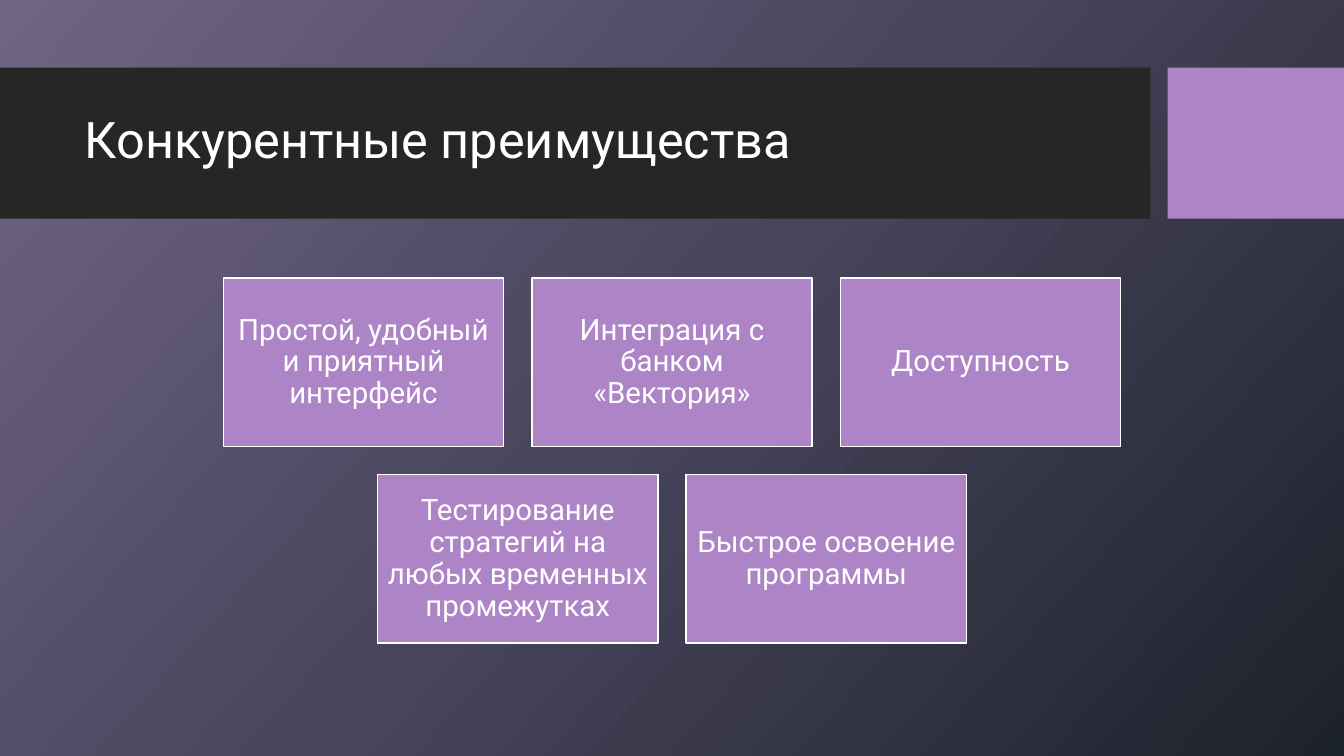
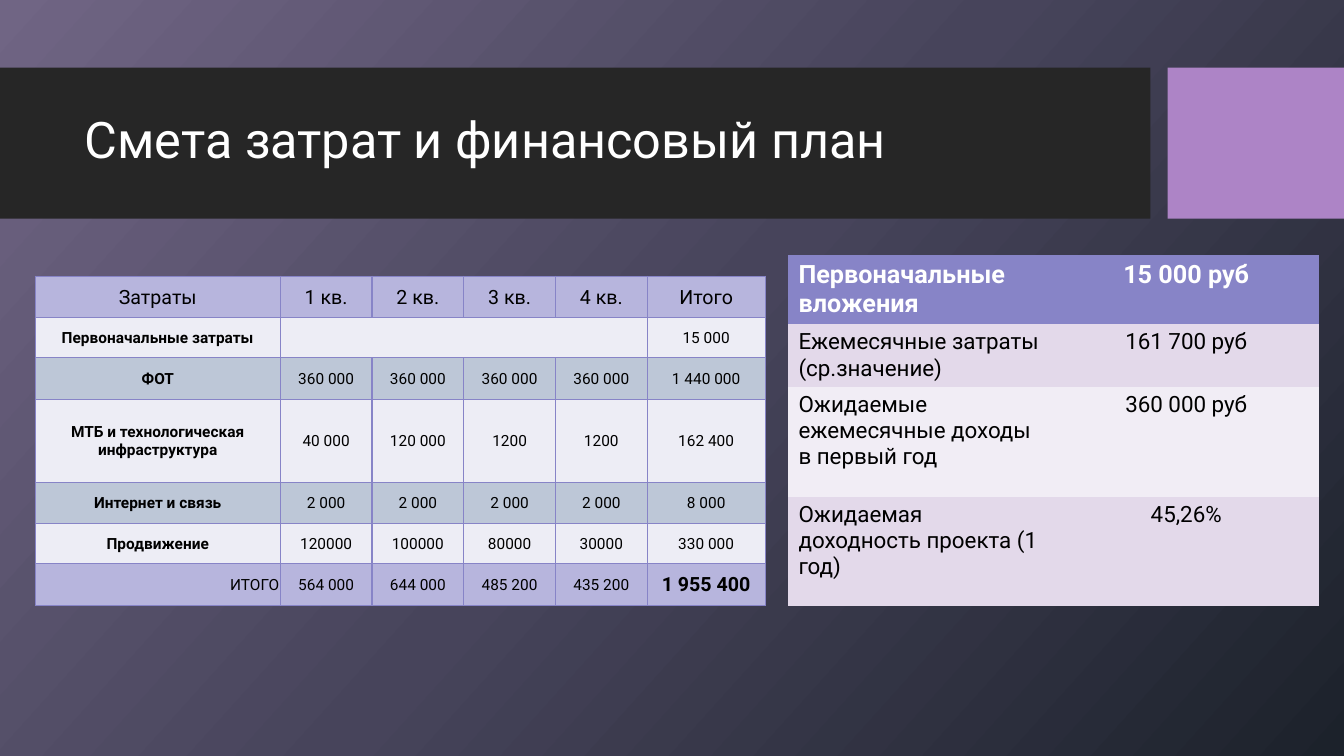
import copy
import dataclasses

import lxml.etree
import pptx
import pptx.dml.color
import pptx.enum.shapes
import pptx.enum.text
import pptx.oxml.ns
import pptx.util

Inches = pptx.util.Inches
qn = pptx.oxml.ns.qn
RGB = pptx.dml.color.RGBColor.from_string
ALIGN = pptx.enum.text.PP_ALIGN
MIDDLE = pptx.enum.text.MSO_ANCHOR.MIDDLE
RECT = pptx.enum.shapes.MSO_SHAPE.RECTANGLE


@dataclasses.dataclass(frozen=True)
class Theme:
    font: str = "Roboto"
    white: str = "FFFFFF"
    black: str = "000000"
    band: str = "262626"
    accent: str = "AD84C6"
    gradient: tuple = ((0, "706584"), (0.5, "47445B"), (1, "1C222B"))
    table_line: str = "8784C7"
    cost_head: str = "B7B5DD"
    cost_rows: tuple = ("EDEDF5", "BDC7D7")
    plan_head: str = "8784C7"
    plan_rows: tuple = ("E3D9EA", "F1EDF5")
    title_size: int = 36
    box_size: int = 21
    plan_head_size: int = 18
    plan_size: int = 16
    cost_head_size: int = 14
    cost_size: int = 11


T = Theme()
NO_STYLE = "{2D5ABB26-0587-4C30-8999-92F81FD0307C}"


def add_run(p, text, size, color, bold=False):
    r = p.add_run()
    r.text = text
    r.font.name = T.font
    r.font.size = pptx.util.Pt(size)
    r.font.bold = bold
    r.font.color.rgb = RGB(color)


def add_table(s, left, top, widths, heights):
    frame = s.shapes.add_table(len(heights), len(widths), Inches(left), Inches(top),
                               Inches(sum(widths)), Inches(sum(heights)))
    tbl = frame.table
    tbl.first_row = tbl.horz_banding = False
    frame.element.find(".//" + qn("a:tableStyleId")).text = NO_STYLE
    for col, width in zip(tbl.columns, widths):
        col.width = Inches(width)
    for row, height in zip(tbl.rows, heights):
        row.height = Inches(height)
    return tbl


prs = pptx.Presentation()
prs.slide_width, prs.slide_height = Inches(13.33), Inches(7.5)
layout = prs.slide_layouts.get_by_name("Title Only")

# Shared gradient background
fill = prs.slide_master.background.fill
fill.gradient()
fill.gradient_angle = 360 - 42
stops = prs.slide_master.element.find(".//" + qn("a:gsLst"))
stops.append(copy.deepcopy(stops[-1]))
for stop, (position, color) in zip(fill.gradient_stops, T.gradient):
    stop.position = position
    stop.color.rgb = RGB(color)

# Shared title position
title = layout.placeholders[0]
title.left, title.top = Inches(0.74), Inches(0.82)
title.width, title.height = Inches(10.51), Inches(1.18)

# Slides with their titles
slides = []
for heading in ("Конкурентные преимущества", "Смета затрат и финансовый план"):
    s = prs.slides.add_slide(layout)
    tf = s.shapes.title.text_frame
    tf.vertical_anchor = MIDDLE
    p = tf.paragraphs[0]
    p.alignment = ALIGN.LEFT
    p.line_spacing = 0.9
    add_run(p, heading, T.title_size, T.white)
    slides.append(s)
benefits_slide, budget_slide = slides

# Title band and accent block, moved onto the layout
for i, (left, width, color) in enumerate(((0, 11.41, T.band), (11.58, 1.75, T.accent))):
    sp = benefits_slide.shapes.add_shape(RECT, Inches(left), Inches(0.67), Inches(width), Inches(1.5))
    sp.shadow.inherit = False
    sp.fill.solid()
    sp.fill.fore_color.rgb = RGB(color)
    sp.line.fill.background()
    sp.element.nvSpPr.cNvPr.set("id", str(100 + i))
    layout.shapes.element.insert(2 + i, sp.element)

# Benefit boxes: centred rows with equal gaps
BOX_W, BOX_H, GAP = 2.78, 1.67, 0.28
benefit_rows = (
    ("Простой, удобный и приятный интерфейс", "Интеграция с банком «Вектория»", "Доступность"),
    ("Тестирование стратегий на любых временных промежутках", "Быстрое освоение программы"),
)
for i, row in enumerate(benefit_rows):
    start = (13.33 - len(row) * BOX_W - (len(row) - 1) * GAP) / 2
    for j, text in enumerate(row):
        sp = benefits_slide.shapes.add_shape(
            RECT, Inches(start + j * (BOX_W + GAP)), Inches(2.76 + i * (BOX_H + GAP)),
            Inches(BOX_W), Inches(BOX_H))
        sp.shadow.inherit = False
        sp.fill.solid()
        sp.fill.fore_color.rgb = RGB(T.accent)
        sp.line.color.rgb = RGB(T.white)
        sp.line.width = pptx.util.Pt(1)
        tf = sp.text_frame
        tf.word_wrap = True
        tf.vertical_anchor = MIDDLE
        tf.margin_left = tf.margin_right = tf.margin_top = tf.margin_bottom = Inches(0.09)
        p = tf.paragraphs[0]
        p.alignment = ALIGN.CENTER
        p.line_spacing = 0.9
        add_run(p, text, T.box_size, T.white)

# Financial plan table
plan = (
    ("Первоначальные вложения", "15 000 руб"),
    ("Ежемесячные затраты (ср.значение)", "161 700 руб"),
    ("Ожидаемые ежемесячные доходы в первый год", "360 000 руб"),
    ("Ожидаемая доходность проекта (1 год)", "45,26%"),
)
tbl = add_table(budget_slide, 7.82, 2.53, [2.63] * 2, [0.68, 0.62, 1.09, 1.09])
for i, row in enumerate(plan):
    head = i == 0
    for j, text in enumerate(row):
        cell = tbl.cell(i, j)
        cell.fill.solid()
        cell.fill.fore_color.rgb = RGB(T.plan_head if head else T.plan_rows[(i - 1) % 2])
        p = cell.text_frame.paragraphs[0]
        p.alignment = ALIGN.CENTER if j else ALIGN.LEFT
        add_run(p, text, T.plan_head_size if head else T.plan_size,
                T.white if head else T.black, head)

# Cost estimate table
costs = (
    ("Затраты", "1 кв.", "2 кв.", "3 кв.", "4 кв.", "Итого"),
    ("Первоначальные затраты", "", "", "", "", "15 000"),
    ("ФОТ", "360 000", "360 000", "360 000", "360 000", "1 440 000"),
    ("МТБ и технологическая инфраструктура", "40 000", "120 000", "1200", "1200", "162 400"),
    ("Интернет и связь", "2 000", "2 000", "2 000", "2 000", "8 000"),
    ("Продвижение", "120000", "100000", "80000", "30000", "330 000"),
    ("ИТОГО", "564 000", "644 000", "485 200", "435 200", "1 955 400"),
)
tbl = add_table(budget_slide, 0.35, 2.74, [2.43] + [0.91] * 4 + [1.17],
                [0.41, 0.4, 0.41, 0.83, 0.4, 0.4, 0.42])
tbl.cell(1, 1).merge(tbl.cell(1, 4))
last_row, last_col = len(costs) - 1, len(costs[0]) - 1
for i, row in enumerate(costs):
    edge = i in (0, last_row)
    for j, text in enumerate(row):
        cell = tbl.cell(i, j)
        cell.vertical_anchor = MIDDLE
        cell.margin_left = cell.margin_right = cell.margin_top = Inches(0.01)
        cell.margin_bottom = 0
        tcPr = cell._tc.get_or_add_tcPr()
        for side in ("a:lnL", "a:lnR", "a:lnT", "a:lnB"):
            ln = lxml.etree.SubElement(tcPr, qn(side), w=str(pptx.util.Pt(1)))
            solid = lxml.etree.SubElement(ln, qn("a:solidFill"))
            lxml.etree.SubElement(solid, qn("a:srgbClr"), val=T.table_line)
        cell.fill.solid()
        cell.fill.fore_color.rgb = RGB(T.cost_head if edge else T.cost_rows[(i - 1) % 2])
        if not text:
            continue
        grand_total = (i, j) == (last_row, last_col)
        p = cell.text_frame.paragraphs[0]
        p.alignment = ALIGN.RIGHT if (i, j) == (last_row, 0) else ALIGN.CENTER
        add_run(p, text, T.cost_head_size if i == 0 or grand_total else T.cost_size,
                T.black, grand_total or (j == 0 and not edge))

prs.save("out.pptx")
